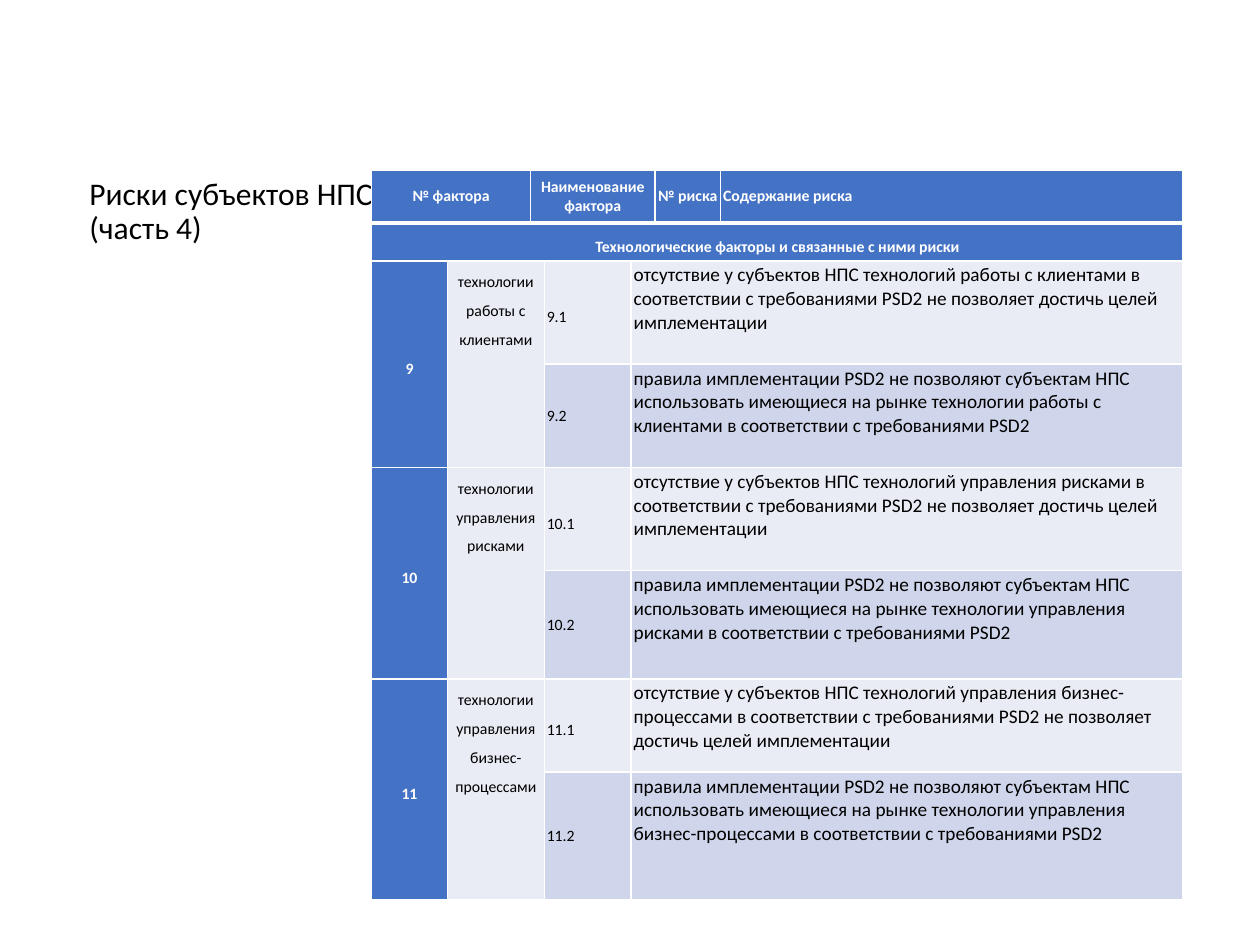
import pptx
import pptx.dml.color
import pptx.enum.text
import pptx.oxml
import pptx.oxml.ns
import pptx.util
from pptx.util import Inches

ALIGN = pptx.enum.text.PP_ALIGN
ANCHOR = pptx.enum.text.MSO_ANCHOR
BLUE, LIGHT, DARK = "4472C4", "E9EBF5", "CFD5EA"
WHITE, BLACK = "FFFFFF", "000000"

COLUMNS = [0.6, 0.66, 0.11, 0.69, 0.19, 0.52, 3.67]
ROWS = [0.42, 0.3, 0.82, 0.82, 0.82, 0.86, 0.74, 1.01]
# First column, number of columns, label, alignment
HEADERS = [
    (0, 2, "№ фактора", ALIGN.CENTER),
    (2, 3, "Наименование фактора", ALIGN.CENTER),
    (5, 1, "№ риска", ALIGN.CENTER),
    (6, 1, "Содержание риска", ALIGN.LEFT),
]
# Factor number, subject of its technologies
FACTORS = [
    (9, "работы с клиентами"),
    (10, "управления рисками"),
    (11, "управления бизнес-процессами"),
]
RISKS = [
    "отсутствие у субъектов НПС технологий {} в соответствии с "
    "требованиями PSD2 не позволяет достичь целей имплементации",
    "правила имплементации PSD2 не позволяют субъектам НПС использовать "
    "имеющиеся на рынке технологии {} в соответствии с требованиями PSD2",
]


def color(value):
    return pptx.dml.color.RGBColor.from_string(value)


class SlideBuilder:
    font = "Calibri"
    margin = Inches(0.02)

    def __init__(self, page):
        self.page = page

    def add_span(self, para, text, size, ink=BLACK, bold=False):
        span = para.add_run()
        span.text = text
        span.font.name = self.font
        span.font.size = pptx.util.Pt(size)
        span.font.bold = bold
        span.font.color.rgb = color(ink)

    def title(self, lines, left, top, width, height):
        box = self.page.shapes.title
        box.left, box.top = Inches(left), Inches(top)
        box.width, box.height = Inches(width), Inches(height)
        box.text_frame.vertical_anchor = ANCHOR.MIDDLE
        para = box.text_frame.paragraphs[0]
        para.alignment = ALIGN.LEFT
        para.line_spacing = 0.9
        for index, line in enumerate(lines):
            if index:
                para.add_line_break()
            self.add_span(para, line, 18)

    def table(self, columns, rows, left, top):
        frame = self.page.shapes.add_table(
            len(rows), len(columns), Inches(left), Inches(top),
            Inches(sum(columns)), Inches(sum(rows)))
        table = frame.table
        for column, width in zip(table.columns, columns):
            column.width = Inches(width)
        for row, height in zip(table.rows, rows):
            row.height = Inches(height)
        for index, row in enumerate(table.rows):
            for cell in row.cells:
                cell.margin_left = cell.margin_right = self.margin
                cell.margin_top = cell.margin_bottom = self.margin
                self.borders(cell, L=1, R=1, T=3 if index == 1 else 1,
                             B=3 if index == 0 else 1)
        return table

    def borders(self, cell, **widths):
        """Draw white cell edges; widths are points keyed by L, R, T, B."""
        properties = cell._tc.get_or_add_tcPr()
        for side, width in widths.items():
            properties.append(pptx.oxml.parse_xml(
                f'<a:ln{side} {pptx.oxml.ns.nsdecls("a")} w="{pptx.util.Pt(width)}">'
                f'<a:solidFill><a:srgbClr val="{WHITE}"/></a:solidFill></a:ln{side}>'))

    def cell(self, table, row, column, text, fill, span=(1, 1), size=9,
             align=ALIGN.LEFT, anchor=ANCHOR.MIDDLE, spacing=1.0):
        """Fill a cell covering span (rows, columns); blue cells get bold white text."""
        cell = table.cell(row, column)
        if span != (1, 1):
            cell.merge(table.cell(row + span[0] - 1, column + span[1] - 1))
        cell.fill.solid()
        cell.fill.fore_color.rgb = color(fill)
        cell.vertical_anchor = anchor
        para = cell.text_frame.paragraphs[0]
        para.alignment = align
        para.line_spacing = spacing
        heading = fill == BLUE
        self.add_span(para, text, size, WHITE if heading else BLACK, heading)


def main():
    deck = pptx.Presentation()
    deck.slide_width, deck.slide_height = Inches(10), Inches(7.5)
    title_only = deck.slide_layouts[5]
    builder = SlideBuilder(deck.slides.add_slide(title_only))
    builder.title(["Риски субъектов НПС", "(часть 4)"], 0.61, 1.24, 7.62, 0.89)

    table = builder.table(COLUMNS, ROWS, 2.95, 1.35)
    for column, width, label, align in HEADERS:
        builder.cell(table, 0, column, label, BLUE, (1, width), align=align)
    builder.cell(table, 1, 0, "Технологические факторы и связанные с ними риски",
                 BLUE, (1, len(COLUMNS)), align=ALIGN.CENTER, spacing=1.5)

    for index, (number, subject) in enumerate(FACTORS):
        first = 2 + index * len(RISKS)
        builder.cell(table, first, 0, str(number), BLUE, (2, 1),
                     align=ALIGN.CENTER, spacing=1.5)
        builder.cell(table, first, 1, f"технологии {subject}", LIGHT, (2, 2),
                     align=ALIGN.CENTER, anchor=ANCHOR.TOP, spacing=1.5)
        for offset, (risk, fill, spacing) in enumerate(
                zip(RISKS, (LIGHT, DARK), (1.5, 1.0))):
            row = first + offset
            builder.cell(table, row, 3, f"{number}.{offset + 1}", fill, spacing=spacing)
            builder.cell(table, row, 4, risk.format(subject), fill, (1, 3),
                         size=11, anchor=ANCHOR.TOP)
    deck.save("out.pptx")


if __name__ == "__main__":
    main()
